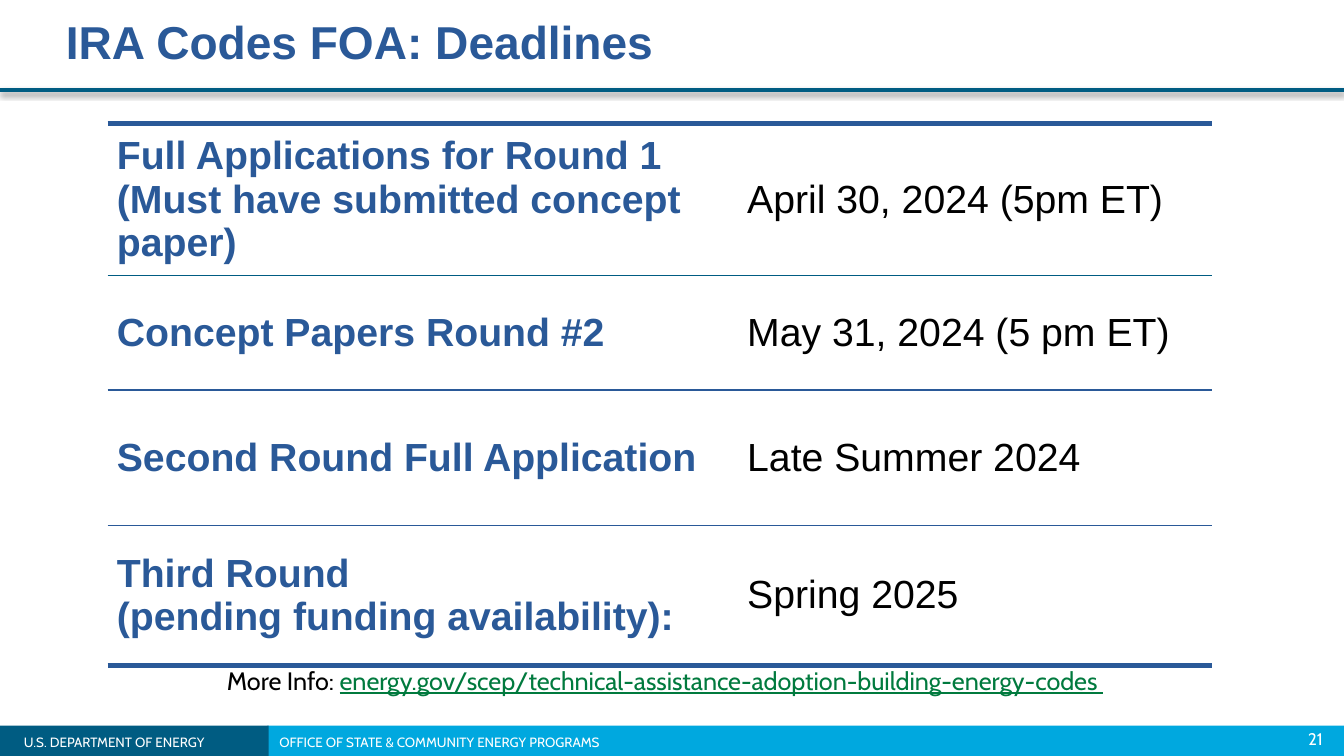
from dataclasses import dataclass

from lxml.etree import SubElement
from pptx import Presentation
from pptx.dml.color import RGBColor
from pptx.enum.shapes import MSO_CONNECTOR, MSO_SHAPE
from pptx.enum.text import MSO_ANCHOR, PP_ALIGN
from pptx.oxml.ns import qn
from pptx.util import Inches, Pt

COLORS = {
    "blue": "2A5998",
    "teal": "005C82",
    "cyan": "00A8DF",
    "green": "017A3E",
    "white": "FFFFFF",
    "black": "000000",
}


@dataclass
class Deadline:
    stage: str
    date: str
    height: float


@dataclass
class Rule:
    color: str
    width: float


@dataclass
class Label:
    text: str
    left: float
    top: float
    width: float
    height: float
    size: float
    align: PP_ALIGN = PP_ALIGN.LEFT
    color: str = "white"
    anchor: MSO_ANCHOR = MSO_ANCHOR.TOP


DEADLINES = [
    Deadline("Full Applications for Round 1 (Must have submitted concept paper)",
             "April 30, 2024 (5pm ET)", 0.86),
    Deadline("Concept Papers Round #2", "May 31, 2024 (5 pm ET)", 0.85),
    Deadline("Second Round Full Application", "Late Summer 2024", 1.01),
    Deadline("Third Round \v(pending funding availability):", "Spring 2025", 1.04),
]
# Horizontal rules from the top of the table to its bottom
RULES = [Rule("blue", 3), Rule("teal", 1), Rule("blue", 1), Rule("blue", 1), Rule("blue", 3)]
COLUMNS = [4.69, 3.53]


def rgb(name: str) -> RGBColor:
    return RGBColor.from_string(COLORS[name])


def format_run(r, font: str, size: float, color: str, bold: bool = False) -> None:
    r.font.name = font
    r.font.size = Pt(size)
    r.font.bold = bold
    r.font.color.rgb = rgb(color)


def add_bar(s, left: float, width: float, color: str) -> None:
    bar = s.shapes.add_shape(MSO_SHAPE.RECTANGLE, Inches(left), Inches(5.4),
                             Inches(width), Inches(0.23))
    bar.shadow.inherit = False
    bar.fill.solid()
    bar.fill.fore_color.rgb = rgb(color)
    bar.line.fill.background()


def add_label(s, label: Label):
    box = s.shapes.add_textbox(Inches(label.left), Inches(label.top),
                               Inches(label.width), Inches(label.height))
    tf = box.text_frame
    tf.word_wrap = True
    tf.vertical_anchor = label.anchor
    tf.text = label.text
    p = tf.paragraphs[0]
    p.alignment = label.align
    format_run(p.runs[0], "Cabin", label.size, label.color)
    return p


def add_tab_stop(p, position: float) -> None:
    tabs = SubElement(p._p.get_or_add_pPr(), qn("a:tabLst"))
    SubElement(tabs, qn("a:tab"), pos=str(Inches(position)), algn="l")


def add_header_line(s) -> None:
    line = s.shapes.add_connector(MSO_CONNECTOR.STRAIGHT, 0, Inches(0.67),
                                  Inches(10), Inches(0.67))
    line.line.color.rgb = rgb("teal")
    line.line.width = Pt(2)
    effects = SubElement(line._element.spPr, qn("a:effectLst"))
    shadow = SubElement(effects, qn("a:outerShdw"), blurRad=str(Pt(3.1)),
                        dist=str(Pt(1.6)), dir="5400000", rotWithShape="0")
    color = SubElement(shadow, qn("a:srgbClr"), val=COLORS["black"])
    SubElement(color, qn("a:alpha"), val="38000")


def set_borders(cell, top: Rule, bottom: Rule) -> None:
    tcPr = cell._tc.get_or_add_tcPr()
    borders = [("L", None), ("R", None), ("T", top), ("B", bottom)]
    for i, (side, rule) in enumerate(borders):
        ln = tcPr.makeelement(qn(f"a:ln{side}"), {})
        tcPr.insert(i, ln)
        if rule is None:
            SubElement(ln, qn("a:noFill"))
        else:
            ln.set("w", str(Pt(rule.width)))
            fill = SubElement(ln, qn("a:solidFill"))
            SubElement(fill, qn("a:srgbClr"), val=COLORS[rule.color])


def fill_cell(cell, text: str, color: str, bold: bool) -> None:
    cell.fill.background()
    cell.vertical_anchor = MSO_ANCHOR.MIDDLE
    cell.margin_left = cell.margin_right = Inches(0.07)
    cell.margin_top = cell.margin_bottom = Inches(0.04)
    cell.text_frame.text = text
    for r in cell.text_frame.paragraphs[0].runs:
        format_run(r, "Arial", 21, color, bold)


def add_deadlines(s) -> None:
    height = sum(d.height for d in DEADLINES)
    table = s.shapes.add_table(len(DEADLINES), len(COLUMNS), Inches(0.8), Inches(0.92),
                               Inches(sum(COLUMNS)), Inches(height)).table
    table.first_row = table.horz_banding = False
    for column, width in zip(table.columns, COLUMNS):
        column.width = Inches(width)
    for i, (row, d) in enumerate(zip(table.rows, DEADLINES)):
        row.height = Inches(d.height)
        stage, date = row.cells
        fill_cell(stage, d.stage, "blue", True)
        fill_cell(date, d.date, "black", False)
        for cell in (stage, date):
            set_borders(cell, RULES[i], RULES[i + 1])


def main() -> None:
    prs = Presentation()
    prs.slide_width = Inches(10)
    prs.slide_height = Inches(10 * 9 / 16)
    s = prs.slides.add_slide(prs.slide_layouts[5])

    # Footer bars and header line
    add_bar(s, 1.99, 8.01, "cyan")
    add_bar(s, 0, 2, "teal")
    add_header_line(s)

    # Title
    title = s.shapes.title
    title.left, title.top = Inches(0.39), Inches(-0.03)
    title.width, title.height = Inches(9.54), Inches(0.67)
    tf = title.text_frame
    tf.text = "IRA Codes FOA: Deadlines"
    tf.vertical_anchor = MSO_ANCHOR.MIDDLE
    p = tf.paragraphs[0]
    p.alignment = PP_ALIGN.LEFT
    format_run(p.runs[0], "Arial", 24.7, "blue", True)

    # Footer text and slide number
    p = add_label(s, Label("U.S. DEPARTMENT OF ENERGY\tOFFICE OF STATE & COMMUNITY ENERGY PROGRAMS",
                           0.08, 5.41, 5.41, 0.22, 7.2))
    add_tab_stop(p, 1.9)
    add_label(s, Label("21", 7.69, 5.35, 2.25, 0.3, 9, PP_ALIGN.RIGHT,
                       anchor=MSO_ANCHOR.MIDDLE))

    # Table of deadlines
    add_deadlines(s)

    # Where to read more
    p = add_label(s, Label("More Info: ", 1.59, 4.9, 6.82, 0.33, 13.5, color="black"))
    r = p.add_run()
    r.text = "energy.gov/scep/technical-assistance-adoption-building-energy-codes "
    format_run(r, "Cabin", 13.5, "green")
    r.font.underline = True

    prs.save("out.pptx")


if __name__ == "__main__":
    main()
